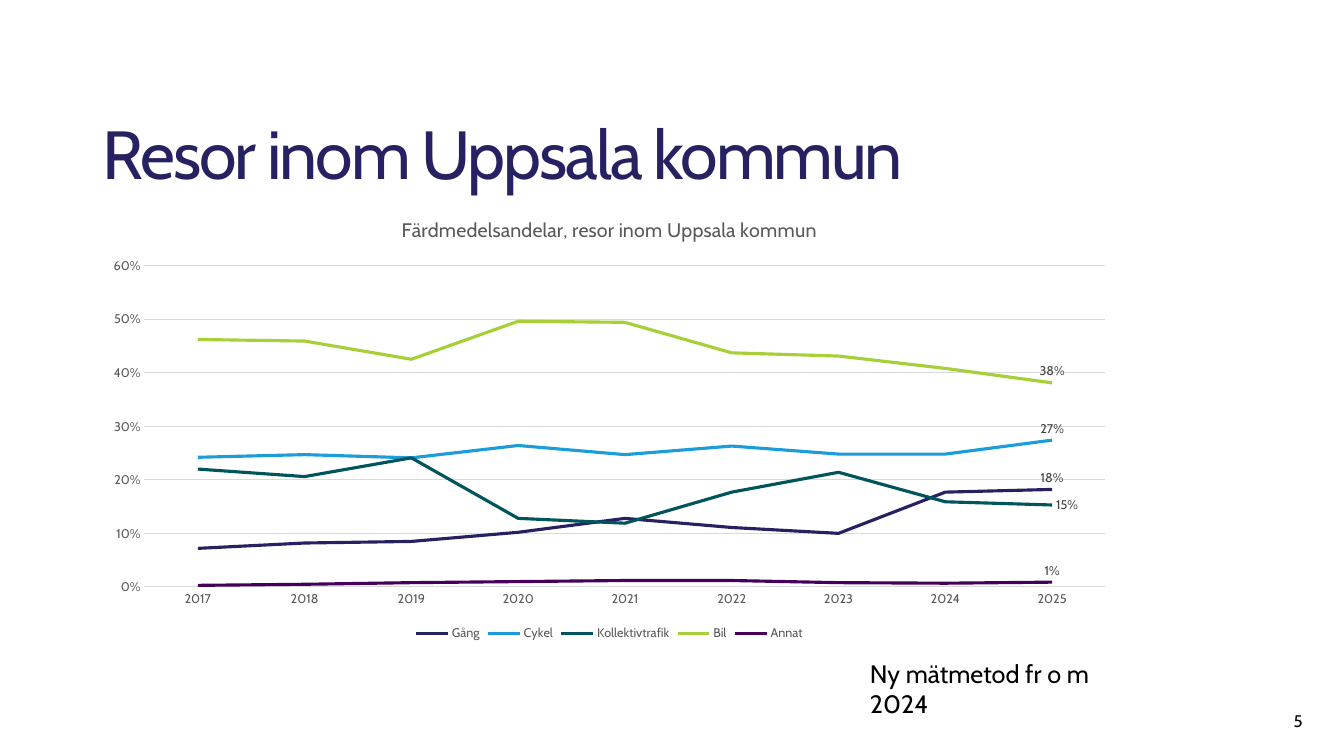
from dataclasses import dataclass

from lxml import etree
from pptx import Presentation
from pptx.chart.data import CategoryChartData as ChartData
from pptx.dml.color import RGBColor as RGB
from pptx.enum.chart import XL_CHART_TYPE as Kind
from pptx.enum.chart import XL_LABEL_POSITION as Spot
from pptx.enum.chart import XL_LEGEND_POSITION as Side
from pptx.enum.chart import XL_TICK_MARK as Tick
from pptx.enum.text import MSO_ANCHOR as Anchor
from pptx.enum.text import PP_ALIGN as Align
from pptx.oxml.ns import qn
from pptx.util import Inches, Pt


@dataclass(frozen=True)
class Theme:
    font: str = "Cabin"
    navy: str = "262261"
    black: str = "000000"
    gray: str = "595959"
    dark: str = "404040"
    grid: str = "D9D9D9"
    title: float = 48.6
    note: float = 18
    head: float = 14
    page: float = 12
    small: float = 9


THEME = Theme()
YEARS = [str(year) for year in range(2017, 2026)]

# Name, colour, label position and share per year
MODES = [
    ("Gång", THEME.navy, Spot.ABOVE,
     [0.072, 0.082, 0.085, 0.102, 0.128, 0.111, 0.1, 0.177, 0.182]),
    ("Cykel", "1C9CD9", Spot.ABOVE,
     [0.242, 0.247, 0.241, 0.264, 0.247, 0.263, 0.248, 0.248, 0.274]),
    ("Kollektivtrafik", "00555C", Spot.RIGHT,
     [0.22, 0.206, 0.241, 0.128, 0.119, 0.177, 0.214, 0.159, 0.153]),
    ("Bil", "A6CF38", Spot.ABOVE,
     [0.462, 0.459, 0.425, 0.496, 0.494, 0.437, 0.431, 0.408, 0.381]),
    ("Annat", "45005C", Spot.ABOVE,
     [0.003, 0.005, 0.008, 0.01, 0.012, 0.012, 0.008, 0.007, 0.009]),
]


def style(font, size, color):
    font.name = THEME.font
    font.size = Pt(size)
    font.bold = False
    font.color.rgb = RGB.from_string(color)


def stroke(line, color, width):
    line.color.rgb = RGB.from_string(color)
    line.width = Pt(width)


def add_text(slide, box, text, size, color, anchor=Anchor.TOP, align=Align.LEFT):
    frame = slide.shapes.add_textbox(*map(Inches, box)).text_frame
    frame.word_wrap = True
    frame.vertical_anchor = anchor
    para = frame.paragraphs[0]
    para.alignment = align
    run = para.add_run()
    run.text = text
    style(run.font, size, color)
    return para, run


def set_plot(chart, **area):
    """Fix the inner plot area as fractions of the chart."""
    plot = chart.plots[0]._element.getparent()
    for old in plot.findall(qn("c:layout")):
        plot.remove(old)
    layout = etree.Element(qn("c:layout"))
    manual = etree.SubElement(layout, qn("c:manualLayout"))
    parts = {"layoutTarget": "inner", "xMode": "edge", "yMode": "edge", **area}
    for tag, value in parts.items():
        etree.SubElement(manual, qn(f"c:{tag}")).set("val", str(value))
    plot.insert(0, layout)


def set_axes(chart):
    years, shares = chart.category_axis, chart.value_axis
    for axis in (years, shares):
        axis.major_tick_mark = axis.minor_tick_mark = Tick.NONE
        style(axis.tick_labels.font, THEME.small, THEME.gray)
    stroke(years.format.line, THEME.grid, 0.75)
    shares.format.line.fill.background()
    stroke(shares.major_gridlines.format.line, THEME.grid, 0.75)
    shares.minimum_scale, shares.maximum_scale = 0, 0.6
    shares.major_unit = 0.1
    shares.tick_labels.number_format = "0%"
    shares.tick_labels.number_format_is_linked = False


def add_lines(slide, box, title):
    data = ChartData(number_format="0%")
    data.categories = YEARS
    for name, _, _, shares in MODES:
        data.add_series(name, shares)
    chart = slide.shapes.add_chart(Kind.LINE, *map(Inches, box), data).chart
    style(chart.font, THEME.small, THEME.gray)

    # Title and legend
    run = chart.chart_title.text_frame.paragraphs[0].add_run()
    run.text = title
    style(run.font, THEME.head, THEME.gray)
    chart.has_legend = True
    chart.legend.position = Side.BOTTOM
    chart.legend.include_in_layout = False
    style(chart.legend.font, THEME.small, THEME.gray)

    # Axes and plot area
    set_axes(chart)
    set_plot(chart, x=0.05, y=0.15, w=0.93, h=0.72)

    # Lines, with a label on the last year
    for line, (_, color, spot, _) in zip(chart.plots[0].series, MODES):
        line.smooth = False
        stroke(line.format.line, color, 2.25)
        line.data_labels.show_value = False
        label = line.points[len(YEARS) - 1].data_label
        style(label.font, THEME.small, THEME.dark)
        label.position = spot


def main():
    deck = Presentation()
    deck.slide_width, deck.slide_height = Inches(13.33), Inches(7.5)
    slide = deck.slides.add_slide(deck.slide_layouts[6])

    # Heading
    para, run = add_text(slide, (0.92, 1.09, 10.25, 0.89),
                         "Resor inom Uppsala kommun",
                         THEME.title, THEME.navy, Anchor.BOTTOM)
    para.line_spacing = 0.9
    run.font._element.set("spc", "-150")

    # Chart
    add_lines(slide, (0.92, 1.97, 10.25, 4.43),
              "Färdmedelsandelar, resor inom Uppsala kommun")

    # Note and page number
    add_text(slide, (8.53, 6.48, 2.46, 0.71), "Ny mätmetod fr o m 2024",
             THEME.note, THEME.black)
    add_text(slide, (12.42, 6.95, 0.6, 0.4), "5", THEME.page, THEME.black,
             Anchor.MIDDLE, Align.RIGHT)

    deck.save("out.pptx")


if __name__ == "__main__":
    main()
